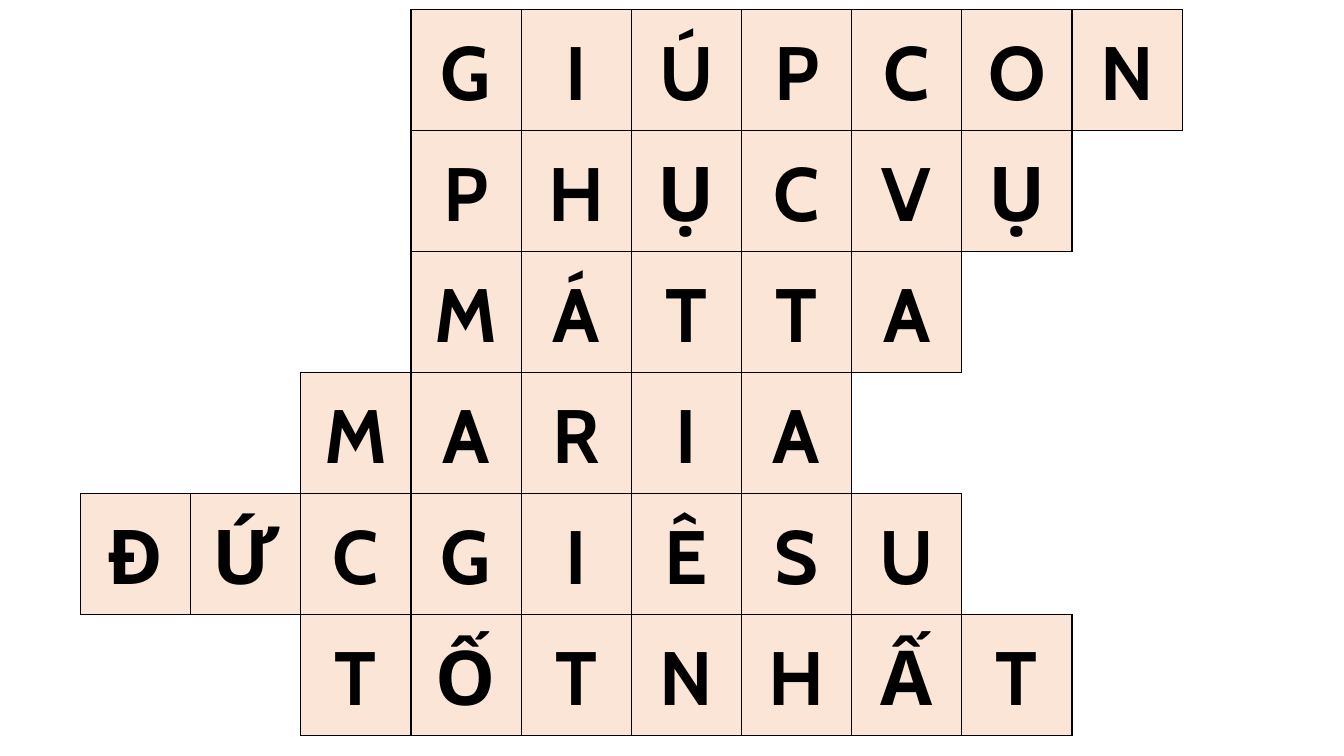
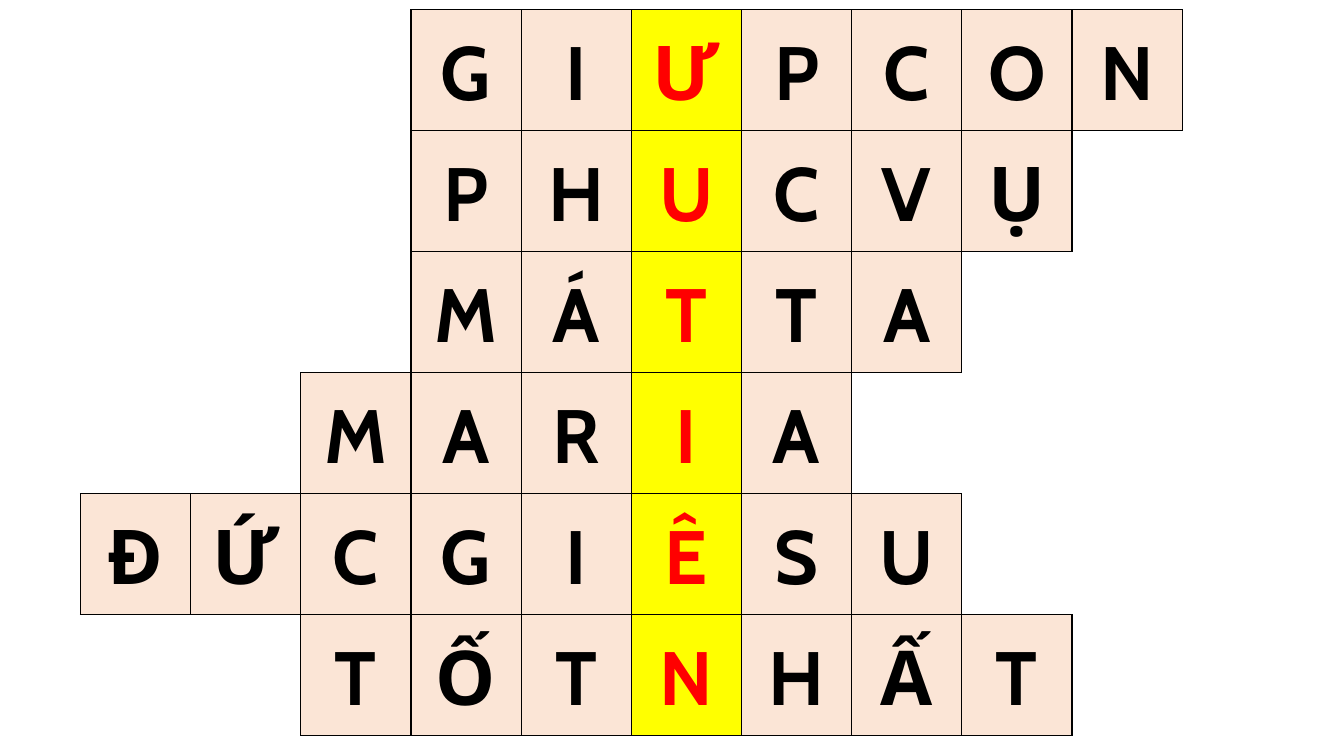
"""Build a two-slide crossword: the solved grid, then the grid with its key word revealed."""
from lxml.etree import SubElement
from pptx import Presentation
from pptx.dml.color import RGBColor
from pptx.enum.text import MSO_ANCHOR, PP_ALIGN
from pptx.oxml.ns import qn
from pptx.util import Pt

ANSWERS = [
    (3, "GIÚPCON"),
    (3, "PHỤCVỤ"),
    (3, "MÁTTA"),
    (2, "MARIA"),
    (0, "ĐỨCGIÊSU"),
    (2, "TỐTNHẤT"),
]
KEY_WORD = "ƯUTIÊN"
KEY_COLUMN = 5
COLUMNS = 11
SIDES = {"lnL": (0, -1), "lnR": (0, 1), "lnT": (-1, 0), "lnB": (1, 0)}

COLORS = {
    "blank": "FFFFFF",
    "tile": "FBE5D6",
    "key_tile": "FFFF00",
    "letter": "000000",
    "key_letter": "FF0000",
    "border": "000000",
}
FONT = "Cabin"
LEFT, TOP = 57.5, 7
CELL_WIDTH, CELL_HEIGHT = 78.7, 86.4


def color(name):
    return RGBColor.from_string(COLORS[name])


def place_letters():
    return {
        (row, start + offset): letter
        for row, (start, answer) in enumerate(ANSWERS)
        for offset, letter in enumerate(answer)
    }


def draw_borders(cell, position, letters):
    row, column = position
    properties = cell._tc.get_or_add_tcPr()
    for index, (side, (down, across)) in enumerate(SIDES.items()):
        line = SubElement(properties, qn(f"a:{side}"), w=str(Pt(1)))
        properties.insert(index, line)
        if position in letters or (row + down, column + across) in letters:
            fill = SubElement(line, qn("a:solidFill"))
            SubElement(fill, qn("a:srgbClr"), val=COLORS["border"])
        else:
            SubElement(line, qn("a:noFill"))


def write_letter(cell, letter, color_name):
    cell.vertical_anchor = MSO_ANCHOR.MIDDLE
    cell.margin_left = cell.margin_right = Pt(5.4)
    cell.margin_top = cell.margin_bottom = 0
    para = cell.text_frame.paragraphs[0]
    para.alignment = PP_ALIGN.CENTER
    para.line_spacing = 1.07
    para.space_after = Pt(8)
    span = para.add_run()
    span.text = letter
    span.font.name = FONT
    span.font.size = Pt(54)
    span.font.bold = True
    span.font.color.rgb = color(color_name)


def add_crossword(deck, letters, revealed):
    page = deck.slides.add_slide(deck.slide_layouts[6])
    rows = len(ANSWERS)
    table = page.shapes.add_table(
        rows, COLUMNS, Pt(LEFT), Pt(TOP),
        Pt(CELL_WIDTH * COLUMNS), Pt(CELL_HEIGHT * rows),
    ).table
    table.first_row = table.horz_banding = False
    for column in table.columns:
        column.width = Pt(CELL_WIDTH)
    for row in table.rows:
        row.height = Pt(CELL_HEIGHT)

    for row in range(rows):
        for column in range(COLUMNS):
            position = (row, column)
            cell = table.cell(row, column)
            is_key = revealed and column == KEY_COLUMN
            prefix = "key_" if is_key else ""
            cell.fill.solid()
            cell.fill.fore_color.rgb = color(prefix + "tile" if position in letters else "blank")
            draw_borders(cell, position, letters)
            if position in letters:
                write_letter(cell, letters[position], prefix + "letter")


def main():
    deck = Presentation()
    deck.slide_width, deck.slide_height = Pt(960), Pt(540)
    letters = place_letters()
    key_letters = {(row, KEY_COLUMN): letter for row, letter in enumerate(KEY_WORD)}
    add_crossword(deck, letters, revealed=False)
    add_crossword(deck, letters | key_letters, revealed=True)
    deck.save("out.pptx")


if __name__ == "__main__":
    main()
